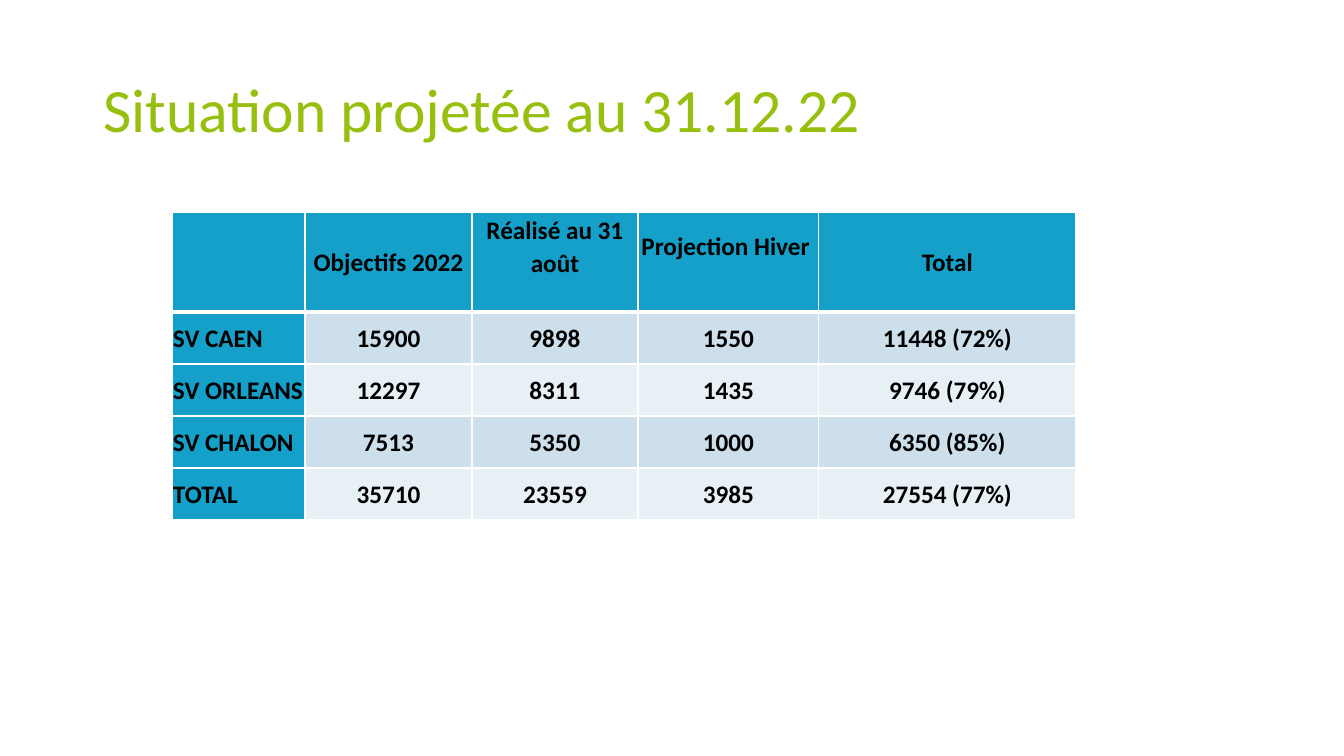
"""Build the slide showing the projected situation at 31.12.22."""
from dataclasses import dataclass

from lxml.etree import SubElement
from pptx import Presentation
from pptx.dml.color import RGBColor
from pptx.enum.text import MSO_ANCHOR, MSO_AUTO_SIZE, PP_ALIGN
from pptx.oxml.ns import qn
from pptx.util import Emu, Pt


@dataclass(frozen=True)
class Theme:
    font: str = "Calibri"
    title_size: int = 44
    cell_size: int = 18
    title: str = "97BF0D"
    text: str = "000000"
    header: str = "14A0C8"
    bands: tuple = ("CCDFEB", "E7F0F5")
    border: str = "FFFFFF"


def px(length):
    return Emu(round(length * 914400 / 100.8))


def add_text(paragraph, text, size, color, bold):
    run = paragraph.add_run()
    run.text = text
    run.font.name = theme.font
    run.font.size = Pt(size)
    run.font.bold = bold
    run.font.color.rgb = RGBColor.from_string(color)


theme = Theme()
presentation = Presentation()
presentation.slide_width = px(1344)
presentation.slide_height = px(756)
slide = presentation.slides.add_slide(presentation.slide_layouts[5])

title = slide.shapes.title
title.left, title.top, title.width, title.height = px(93), px(40), px(1200), px(146)
title_frame = title.text_frame
title_frame.auto_size = MSO_AUTO_SIZE.NONE
title_frame.word_wrap = True
title_frame.vertical_anchor = MSO_ANCHOR.MIDDLE
title_paragraph = title_frame.paragraphs[0]
title_paragraph.alignment = PP_ALIGN.LEFT
title_paragraph.line_spacing = 0.9
add_text(title_paragraph, "Situation projetée au 31.12.22", theme.title_size, theme.title, False)

rows = [
    ["", "Objectifs 2022", "Réalisé au 31 août", "Projection Hiver ", "Total"],
    ["SV CAEN", "15900", "9898", "1550", "11448 (72%)"],
    ["SV ORLEANS", "12297", "8311", "1435", "9746 (79%)"],
    ["SV CHALON", "7513", "5350", "1000", "6350 (85%)"],
    ["TOTAL", "35710", "23559", "3985", "27554 (77%)"],
]
column_widths = [133, 167, 166, 181, 257]
row_heights = [100] + [52] * 4
raised_headers = (2, 3)

table = slide.shapes.add_table(
    len(rows), len(column_widths), px(172), px(212), px(sum(column_widths)), px(sum(row_heights))
).table
for column, width in zip(table.columns, column_widths):
    column.width = px(width)

for row_index, values in enumerate(rows):
    table.rows[row_index].height = px(row_heights[row_index])
    for column_index, value in enumerate(values):
        cell = table.cell(row_index, column_index)
        is_header = row_index == 0
        is_label = column_index == 0
        cell.vertical_anchor = MSO_ANCHOR.MIDDLE
        cell.margin_left = cell.margin_right = cell.margin_top = px(1)
        cell.margin_bottom = px(33 if is_header and column_index in raised_headers else 1)

        border_widths = {
            "a:lnL": 1,
            "a:lnR": 1,
            "a:lnT": 3 if row_index == 1 else 1,
            "a:lnB": 3 if is_header else 1,
        }
        for side, width in border_widths.items():
            line = SubElement(cell._tc.get_or_add_tcPr(), qn(side), w=str(Pt(width)))
            line_fill = SubElement(line, qn("a:solidFill"))
            SubElement(line_fill, qn("a:srgbClr"), val=theme.border)

        cell.fill.solid()
        fill = theme.header if is_header or is_label else theme.bands[(row_index - 1) % 2]
        cell.fill.fore_color.rgb = RGBColor.from_string(fill)

        if value:
            paragraph = cell.text_frame.paragraphs[0]
            paragraph.alignment = PP_ALIGN.LEFT if is_label else PP_ALIGN.CENTER
            paragraph.line_spacing = 1.07
            add_text(paragraph, value, theme.cell_size, theme.text, True)

presentation.save("out.pptx")
